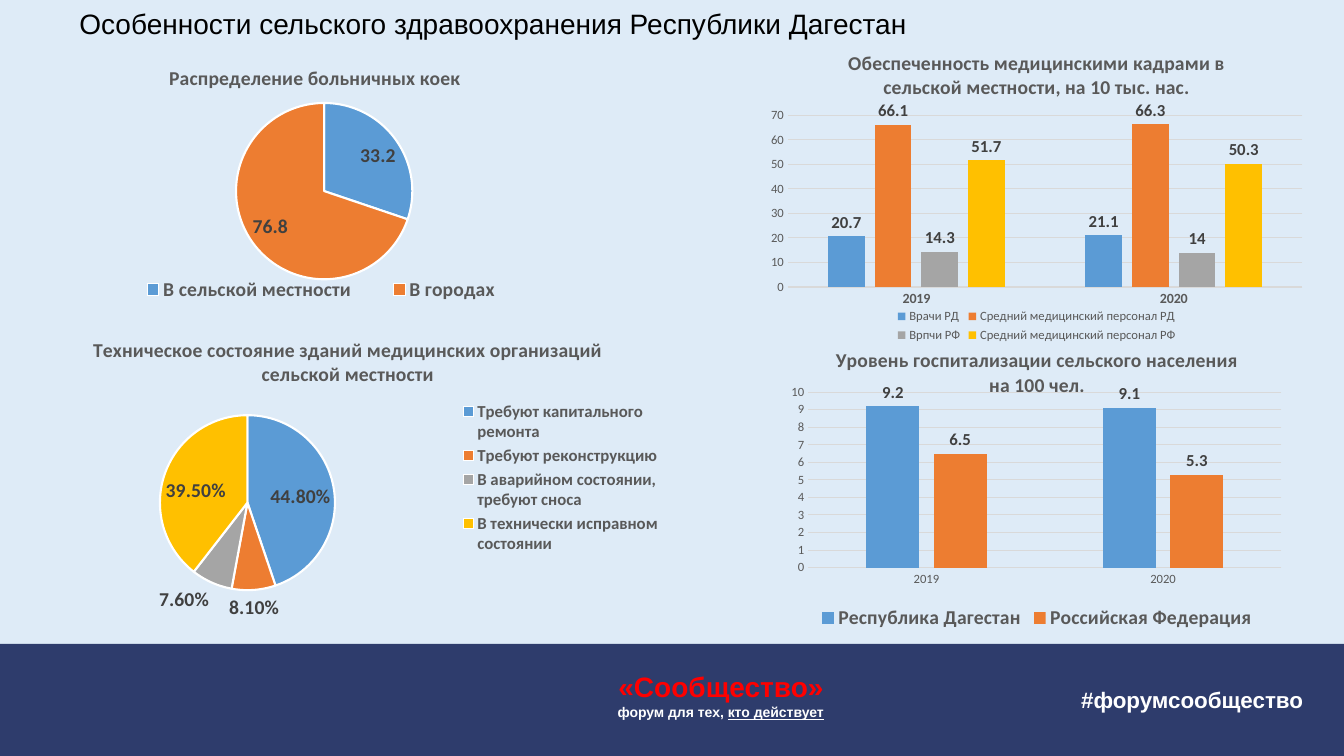
from lxml import etree
from pptx import Presentation
from pptx import util as u
from pptx.chart import data as chart_data
from pptx.dml import color
from pptx.enum import chart as charts, shapes, text

TITLE = "Особенности сельского здравоохранения Республики Дагестан"
HASHTAG = "#форумсообщество"
FORUM = ("«Сообщество»", "форум для тех, ", "кто действует")

PIES = [
    {"title": "Распределение больничных коек", "box": (5, 36, 440, 188),
     "plot": (0.03, 0.2, 0.97, 0.67), "key": (0.17, 0.86, 0.68, 0.1),
     "legend": ("BOTTOM", 14), "format": "General",
     "categories": ["В сельской местности", "В городах"], "values": [33.2, 76.8]},
    {"title": "Техническое состояние зданий медицинских организаций сельской местности",
     "box": (17, 229.5, 463, 223.5), "plot": (0.21, 0.3, 0.27, 0.56), "key": None,
     "legend": ("RIGHT", 12), "format": "0.00%",
     "categories": ["Требуют капитального ремонта", "Требуют реконструкцию",
                    "В аварийном состоянии, требуют сноса", "В технически исправном состоянии"],
     "values": [0.448, 0.081, 0.076, 0.395]},
]
YEARS = ["2019", "2020"]
COLUMNS = [
    {"title": "Обеспеченность медицинскими кадрами в сельской местности, на 10 тыс. нас.",
     "box": (538.5, 24.5, 404, 223), "plot": (0.06, 0.26, 0.91, 0.55),
     "legend": ("BOTTOM", 9), "bold": False, "years": (10, True), "scale": (70, 10),
     "series": {"Врачи РД": [20.7, 21.1], "Средний медицинский персонал РД": [66.1, 66.3],
                "Врпчи РФ": [14.3, 14], "Средний медицинский персонал РФ": [51.7, 50.3]}},
    {"title": "Уровень госпитализации сельского населения на 100 чел.",
     "box": (555, 237, 371.5, 216), "plot": (0.06, 0.2, 0.91, 0.58),
     "legend": ("BOTTOM", 14), "bold": True, "years": (9, False), "scale": (10, 1),
     "series": {"Республика Дагестан": [9.2, 9.1], "Российская Федерация": [6.5, 5.3]}},
]

THEME = {
    "background": "DEEBF7", "footer": "2E3C6C", "white": "FFFFFF", "red": "FF0000",
    "black": "000000", "gray": "595959", "label": "404040", "line": "D9D9D9",
    "series": ["5B9BD5", "ED7D31", "A5A5A5", "FFC000"],
    "text_font": "Arial", "chart_font": "Calibri",
    "heading": 20, "hashtag": 16, "small": 10, "chart_title": 14,
    "pie_label": 14, "column_label": 12, "axis": 9,
}
CHART_NS = "http://schemas.openxmlformats.org/drawingml/2006/chart"


def rgb(name):
    return color.RGBColor.from_string(THEME.get(name, name))


def style_font(font, size, tint, bold=False, family="chart_font"):
    font.name, font.size, font.bold = THEME[family], u.Pt(size), bold
    font.color.rgb = rgb(tint)


def add_run(paragraph, words, size, tint, bold=True, family="text_font"):
    run = paragraph.add_run()
    run.text = words
    style_font(run.font, size, tint, bold, family)
    return run


def points(box):
    return [u.Pt(length) for length in box]


def make_layout(fractions, inner):
    layout = etree.Element(f"{{{CHART_NS}}}layout")
    manual = etree.SubElement(layout, f"{{{CHART_NS}}}manualLayout")
    settings = [("layoutTarget", "inner")] if inner else []
    settings += [("xMode", "edge"), ("yMode", "edge")] + list(zip("xywh", fractions))
    for tag, value in settings:
        etree.SubElement(manual, f"{{{CHART_NS}}}{tag}", val=str(value))
    return layout


def add_chart(slide, kind, item, series, categories, number_format="General"):
    data = chart_data.CategoryChartData(number_format=number_format)
    data.categories = categories
    for name, values in series.items():
        data.add_series(name, values)
    chart = slide.shapes.add_chart(kind, *points(item["box"]), data).chart
    style_font(chart.font, THEME["small"], "black")
    chart.has_title = True
    add_run(chart.chart_title.text_frame.paragraphs[0], item["title"],
            THEME["chart_title"], "gray", family="chart_font")
    position, size = item["legend"]
    chart.has_legend = True
    chart.legend.position = charts.XL_LEGEND_POSITION[position]
    chart.legend.include_in_layout = False
    style_font(chart.legend.font, size, "gray", item.get("bold", True))
    area = chart._chartSpace.chart.plotArea
    for old in area.findall(f"{{{CHART_NS}}}layout"):
        area.remove(old)
    area.insert(0, make_layout(item["plot"], True))
    return chart


def add_labels(plot, size, position, number_format="General"):
    plot.has_data_labels = True
    labels = plot.data_labels
    labels.show_value = True
    labels.position = charts.XL_LABEL_POSITION[position]
    labels.number_format, labels.number_format_is_linked = number_format, False
    style_font(labels.font, size, "label", True)


def add_pie(slide, item):
    chart = add_chart(slide, charts.XL_CHART_TYPE.PIE, item, {item["title"]: item["values"]},
                      item["categories"], item["format"])
    if item["key"]:
        legend = chart.legend._element
        for old in legend.findall(f"{{{CHART_NS}}}layout"):
            legend.remove(old)
        legend.find(f"{{{CHART_NS}}}legendPos").addnext(make_layout(item["key"], False))
    plot = chart.plots[0]
    add_labels(plot, THEME["pie_label"], "BEST_FIT", item["format"])
    for index in range(len(item["values"])):
        sector = plot.series[0].points[index].format
        sector.fill.solid()
        sector.fill.fore_color.rgb = rgb(THEME["series"][index])
        sector.line.color.rgb = rgb("white")
        sector.line.width = u.Pt(1.5)


def add_columns(slide, item):
    chart = add_chart(slide, charts.XL_CHART_TYPE.COLUMN_CLUSTERED, item, item["series"], YEARS)
    plot = chart.plots[0]
    plot.vary_by_categories = False
    plot.gap_width, plot.overlap = 219, -27
    add_labels(plot, THEME["column_label"], "OUTSIDE_END")
    for series, tint in zip(plot.series, THEME["series"]):
        series.format.fill.solid()
        series.format.fill.fore_color.rgb = rgb(tint)
    years, scale = chart.category_axis, chart.value_axis
    for axis in (years, scale):
        axis.major_tick_mark = axis.minor_tick_mark = charts.XL_TICK_MARK.NONE
    style_font(years.tick_labels.font, item["years"][0], "gray", item["years"][1])
    style_font(scale.tick_labels.font, THEME["axis"], "gray")
    scale.minimum_scale = 0
    scale.maximum_scale, scale.major_unit = item["scale"]
    scale.has_major_gridlines = True
    scale.format.line.fill.background()
    for line in (years.format.line, scale.major_gridlines.format.line):
        line.color.rgb = rgb("line")
        line.width = u.Pt(0.75)


def add_footer_text(slide, box, lines):
    frame = slide.shapes.add_textbox(*points(box)).text_frame
    frame.word_wrap = False
    for index, runs in enumerate(lines):
        paragraph = frame.add_paragraph() if index else frame.paragraphs[0]
        paragraph.alignment = text.PP_ALIGN.RIGHT
        for words, size, tint, underline in runs:
            add_run(paragraph, words, THEME[size], tint).font.underline = underline


def add_footer(slide):
    band = slide.shapes.add_shape(shapes.MSO_SHAPE.RECTANGLE, *points((0, 460, 960, 80)))
    band.shadow.inherit = False
    band.fill.solid()
    band.fill.fore_color.rgb = rgb("footer")
    band.line.fill.background()
    name, motto, action = FORUM
    add_footer_text(slide, (763, 486.5, 175, 26.5), [[(HASHTAG, "hashtag", "white", False)]])
    add_footer_text(slide, (431.5, 475, 164, 44), [
        [(name, "heading", "red", False)],
        [(motto, "small", "white", False), (action, "small", "white", True)]])


def add_title(slide):
    title = slide.shapes.title
    title.left, title.top, title.width, title.height = points((49.5, 0, 720, 36))
    title.text_frame.vertical_anchor = text.MSO_ANCHOR.MIDDLE
    paragraph = title.text_frame.paragraphs[0]
    paragraph.alignment = text.PP_ALIGN.LEFT
    paragraph.line_spacing = 0.9
    add_run(paragraph, TITLE, THEME["heading"], "black", False)


def main():
    """Build the slide on rural health care and save it."""
    presentation = Presentation()
    presentation.slide_width, presentation.slide_height = u.Pt(960), u.Pt(540)
    slide = presentation.slides.add_slide(presentation.slide_layouts[5])
    slide.background.fill.solid()
    slide.background.fill.fore_color.rgb = rgb("background")
    add_footer(slide)
    add_title(slide)
    for item in PIES:
        add_pie(slide, item)
    for item in COLUMNS:
        add_columns(slide, item)
    presentation.save("out.pptx")


if __name__ == "__main__":
    main()
